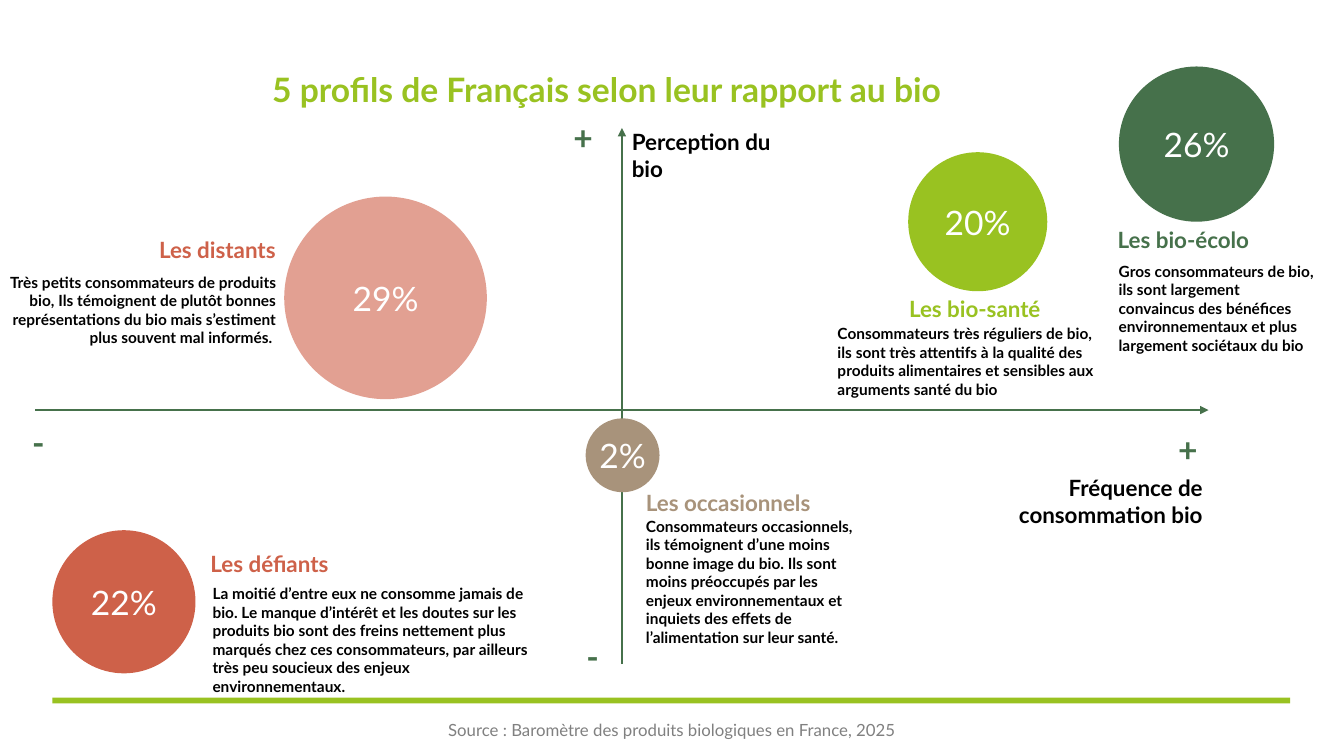
import pptx
import pptx.util
import pptx.dml.color
import pptx.enum.shapes
import pptx.enum.text
import pptx.oxml.ns
from lxml import etree

# The slide is a grid of 160 columns by 90 rows of square cells.
SLIDE_WIDTH = pptx.util.Inches(13.33)
SLIDE_HEIGHT = pptx.util.Inches(7.5)
COLUMN = SLIDE_WIDTH / 160
ROW = SLIDE_HEIGHT / 90

GREEN, LIME, BEIGE = "46714B", "99C221", "A8937B"
RED, PINK = "CE6149", "E2A092"
BLACK, WHITE, GREY = "000000", "FFFFFF", "808080"

ALIGN = pptx.enum.text.PP_ALIGN
ANCHOR = pptx.enum.text.MSO_ANCHOR
SHAPES = pptx.enum.shapes.MSO_SHAPE

# Heading and description places are offsets from the circle's top left corner.
PROFILES = [
    dict(name="Les bio-écolo", share="26%", circle=(133.2, 7.92, 18.48),
         fill=GREEN, color=GREEN, heading=(-1.32, 18.36),
         description=(-1.2, 22.68, 25.8), lines=5,
         text="Gros consommateurs de bio, ils sont largement convaincus des bénéfices "
              "environnementaux et plus largement sociétaux du bio"),
    dict(name="Les bio-santé", share="20%", circle=(108.12, 18.12, 16.56),
         fill=LIME, color=LIME, heading=(-1.08, 16.44),
         description=(-9.6, 19.92, 34.68), lines=4,
         text="Consommateurs très réguliers de bio, ils sont très attentifs à la qualité "
              "des produits alimentaires et sensibles aux arguments santé du bio"),
    dict(name="Les occasionnels", share="2%", circle=(69.72, 49.8, 8.8),
         fill=BEIGE, color=BEIGE, heading=(6, 7.8),
         description=(6, 11.16, 28.32), lines=7,
         text="Consommateurs occasionnels, ils témoignent d’une moins bonne image du bio. "
              "Ils sont moins préoccupés par les enjeux environnementaux et inquiets des "
              "effets de l’alimentation sur leur santé."),
    dict(name="Les distants", share="29%", circle=(33.84, 23.4, 24.12),
         fill=PINK, color=RED, heading=(-16.08, 4.08),
         description=(-34.44, 8.52, 34.68), lines=4, align=ALIGN.RIGHT,
         text="Très petits consommateurs de produits bio, Ils témoignent de plutôt bonnes "
              "représentations du bio mais s’estiment plus souvent mal informés. "),
    dict(name="Les défiants", share="22%", circle=(6.24, 63.12, 17.04),
         fill=RED, color=RED, heading=(17.64, 1.8),
         description=(17.88, 5.88, 40.2), lines=6,
         text="La moitié d’entre eux ne consomme jamais de bio. Le manque d’intérêt et les "
              "doutes sur les produits bio sont des freins nettement plus marqués chez ces "
              "consommateurs, par ailleurs très peu soucieux des enjeux environnementaux."),
]


def rgb(color):
    return pptx.dml.color.RGBColor.from_string(color)


def cells(left, top, width, height):
    """Turn columns and rows into slide lengths."""
    return [round(left * COLUMN), round(top * ROW),
            round(width * COLUMN), round(height * ROW)]


def write(shape, text, size, color, bold=True, align=ALIGN.LEFT, anchor=ANCHOR.TOP):
    frame = shape.text_frame
    frame.word_wrap = True
    frame.vertical_anchor = anchor
    frame.text = text
    paragraph = frame.paragraphs[0]
    paragraph.alignment = align
    formats = dict(name="Lato", size=pptx.util.Pt(size), bold=bold)
    for attribute, value in formats.items():
        setattr(paragraph.runs[0].font, attribute, value)
    paragraph.runs[0].font.color.rgb = rgb(color)
    return paragraph


def add_label(slide, box, text, size, color, **formats):
    write(slide.shapes.add_textbox(*cells(*box)), text, size, color, **formats)


def add_filled(slide, kind, box, color):
    shape = slide.shapes.add_shape(kind, *cells(*box))
    shape.shadow.inherit = False
    shape.fill.solid()
    shape.fill.fore_color.rgb = rgb(color)
    shape.line.fill.background()
    return shape


def add_title(slide, box):
    title = slide.shapes.title
    title.left, title.top, title.width, title.height = cells(*box)
    paragraph = write(title, "5 profils de Français selon leur rapport au bio", 24, LIME,
                      anchor=ANCHOR.MIDDLE)
    paragraph.line_spacing = 0.9


def add_axis(slide, start, end):
    points = cells(*start, *end)
    axis = slide.shapes.add_connector(pptx.enum.shapes.MSO_CONNECTOR.STRAIGHT, *points)
    axis.line.color.rgb = rgb(GREEN)
    axis.line.width = pptx.util.Pt(1.5)
    qualified = pptx.oxml.ns.qn
    etree.SubElement(axis.line._get_or_add_ln(), qualified("a:tailEnd"), type="triangle")
    etree.SubElement(axis._element.spPr, qualified("a:effectLst"))


def add_axes(slide, box):
    """Draw the two axes across the box, with their names and signs."""
    left, top, width, height = box
    middle_x, middle_y = left + width / 2, top + height * 0.526
    add_axis(slide, (left, middle_y), (left + width, middle_y))
    add_axis(slide, (middle_x, top + height), (middle_x, top))
    add_label(slide, (middle_x, top - 0.6, 21.36, 7.68), "Perception du bio", 16, BLACK)
    add_label(slide, (left + width - 25.68, middle_y + 7.08, 26.16, 7.68),
              "Fréquence de consommation bio", 16, BLACK, align=ALIGN.RIGHT)
    signs = [("+", left + width - 4.8, middle_y + 1.68),
             ("+", middle_x - 6.96, top - 1.92),
             ("-", left - 1.56, middle_y + 0.84),
             ("-", middle_x - 5.4, top + height - 3.96)]
    for sign, x, y in signs:
        add_label(slide, (x, y, 6.72, 6), sign, 24, GREEN)


def add_profile(slide, profile):
    left, top, diameter = profile["circle"]
    circle = add_filled(slide, SHAPES.OVAL, (left, top, diameter, diameter), profile["fill"])
    write(circle, profile["share"], 24, WHITE, bold=False,
          align=ALIGN.CENTER, anchor=ANCHOR.MIDDLE)
    for side in ("left", "right", "top", "bottom"):
        setattr(circle.text_frame, f"margin_{side}", 0)
    x, y = profile["heading"]
    add_label(slide, (left + x, top + y, 24.24, 4.44), profile["name"], 16, profile["color"])
    x, y, width = profile["description"]
    height = profile["lines"] * 2.2 + 1.2
    add_label(slide, (left + x, top + y, width, height), profile["text"], 11, BLACK,
              align=profile.get("align", ALIGN.LEFT))


def add_footer(slide, box):
    left, top, width, height = box
    add_filled(slide, SHAPES.RECTANGLE, (left, top, width, 0.72), LIME)
    add_label(slide, (left + 39.96, top + 0.6, 67.56, height - 0.6),
              "Source : Baromètre des produits biologiques en France, 2025", 12, GREY,
              bold=False, align=ALIGN.CENTER, anchor=ANCHOR.MIDDLE)


def main():
    presentation = pptx.Presentation()
    presentation.slide_width = SLIDE_WIDTH
    presentation.slide_height = SLIDE_HEIGHT
    slide = presentation.slides.add_slide(presentation.slide_layouts[5])
    add_footer(slide, (6.24, 83.04, 147.36, 7.08))
    add_title(slide, (31.2, 5.16, 112.8, 11.4))
    add_axes(slide, (4.2, 15.24, 139.68, 63.84))
    for profile in PROFILES:
        add_profile(slide, profile)
    presentation.save("out.pptx")


if __name__ == "__main__":
    main()
